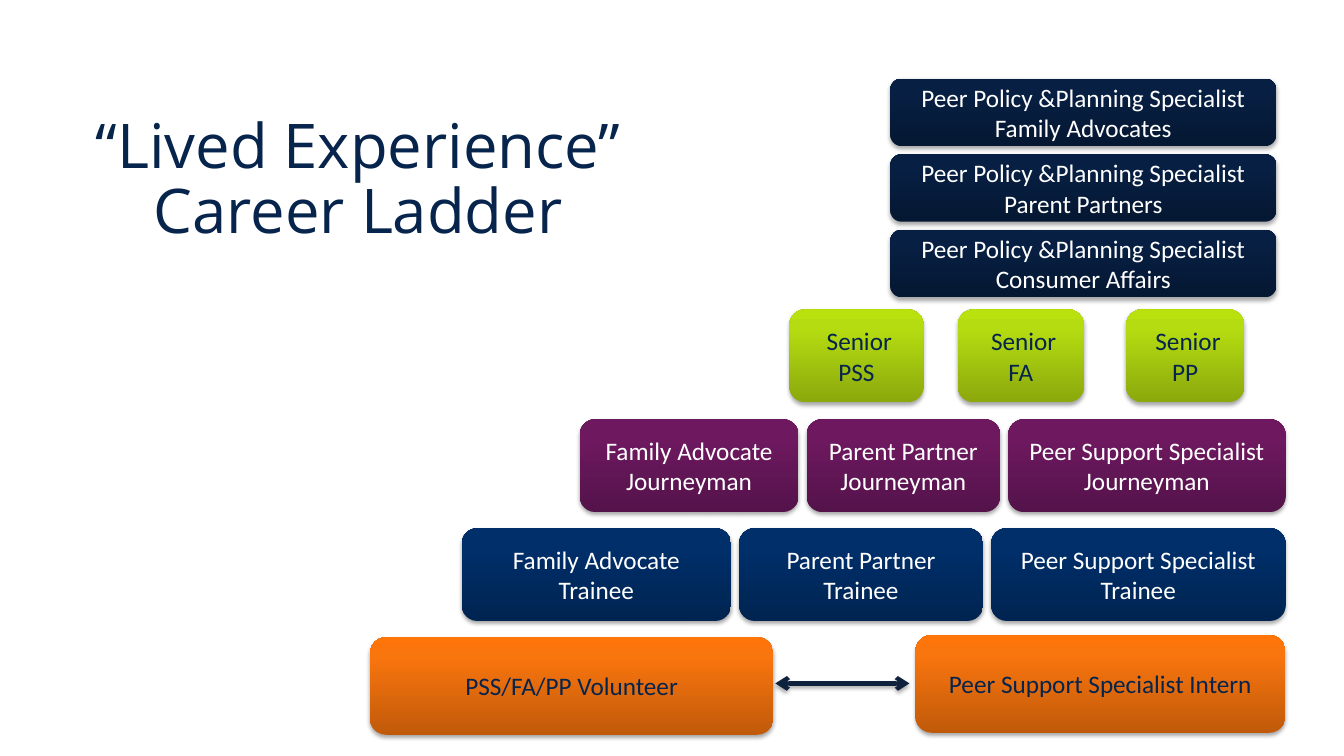
"""Builds the "Lived Experience" career ladder slide."""
from copy import deepcopy
from lxml.etree import SubElement
from pptx import Presentation
from pptx.dml.color import RGBColor
from pptx.enum.shapes import MSO_CONNECTOR, MSO_SHAPE
from pptx.enum.text import MSO_ANCHOR, PP_ALIGN
from pptx.oxml.ns import qn
from pptx.util import Inches, Pt

COLORS = {
    "ink": "06244C", "white": "FFFFFF", "arrow": "0E213D", "shadow": "000000",
    "orange": ("C05A0A", "F9750E", "FF7509"),
    "blue": ("002451", "002F6A", "002F6A"),
    "purple": ("54134A", "6E1860", "701661"),
    "green": ("8BA90D", "B5DC11", "B8E10D"),
    "navy": ("051833", "071F42", "061F43"),
}
POLICY = "Peer Policy &Planning Specialist\n"
ROWS = [
    ("navy", "white", 0.78, 0.67, [(8.83, 3.83, POLICY + "Family Advocates")]),
    ("navy", "white", 1.53, 0.67, [(8.83, 3.83, POLICY + "Parent Partners")]),
    ("navy", "white", 2.28, 0.67, [(8.83, 3.83, POLICY + "Consumer Affairs")]),
    ("green", "ink", 3.07, 0.92, [(7.83, 1.33, " Senior PSS"),
                                  (9.5, 1.25, " Senior FA"),
                                  (11.17, 1.17, " Senior PP")]),
    ("purple", "white", 4.16, 0.92, [(5.75, 2.17, "Family Advocate Journeyman"),
                                     (8, 1.92, "Parent Partner Journeyman"),
                                     (10, 2.75, "Peer Support Specialist Journeyman")]),
    ("blue", "white", 5.24, 0.92, [(4.58, 2.67, "Family Advocate Trainee"),
                                   (7.33, 2.42, "Parent Partner Trainee"),
                                   (9.83, 2.92, "Peer Support Specialist Trainee")]),
    ("orange", "ink", 6.32, 0.97, [(3.67, 4, "PSS/FA/PP Volunteer")]),
    ("orange", "ink", 6.3, 0.97, [(9.08, 3.67, "Peer Support Specialist Intern")]),
]


def add_shadow(effects):
    shadow = SubElement(effects, qn("a:outerShdw"), blurRad=str(Pt(3.1)),
                        dist=str(Pt(1.8)), dir="5400000", rotWithShape="0")
    color = SubElement(shadow, qn("a:srgbClr"), val=COLORS["shadow"])
    SubElement(color, qn("a:alpha"), val="35000")


def style_text(tf, size, font, color):
    tf.word_wrap = True
    tf.vertical_anchor = MSO_ANCHOR.MIDDLE
    for p in tf.paragraphs:
        p.alignment = PP_ALIGN.CENTER
        for r in p.runs:
            r.font.size = Pt(size)
            r.font.name = font
            r.font.color.rgb = RGBColor.from_string(COLORS[color])


prs = Presentation()
prs.slide_width, prs.slide_height = Inches(13.33), Inches(7.5)
slide = prs.slides.add_slide(prs.slide_layouts[6])

title = slide.shapes.add_textbox(Inches(0.67), Inches(0.87), Inches(5.77), Inches(1.85))
tf = title.text_frame
tf.margin_left = tf.margin_right = tf.margin_top = tf.margin_bottom = Inches(0)
tf.text = "“Lived Experience”\vCareer Ladder"
tf.paragraphs[0].line_spacing = Pt(46)
style_text(tf, 44, "Open Sans", "ink")

for fill, ink, top, height, boxes in ROWS:
    for left, width, text in boxes:
        s = slide.shapes.add_shape(MSO_SHAPE.ROUNDED_RECTANGLE, Inches(left),
                                   Inches(top), Inches(width), Inches(height))
        s.line.fill.background()
        s.fill.gradient()
        s.fill.gradient_angle = 90
        stops = s._element.spPr.find(".//" + qn("a:gsLst"))
        stops.append(deepcopy(stops[-1]))
        for stop, position, color in zip(s.fill.gradient_stops, (0, 0.8, 1), COLORS[fill]):
            stop.position = position
            stop.color.rgb = RGBColor.from_string(color)
        s.shadow.inherit = False
        add_shadow(s._element.spPr.find(qn("a:effectLst")))
        s.text_frame.text = text
        style_text(s.text_frame, 18, "Calibri", ink)

arrow = slide.shapes.add_connector(MSO_CONNECTOR.STRAIGHT, Inches(7.69), Inches(6.78),
                                   Inches(9.02), Inches(6.78))
arrow.line.width = Pt(3)
arrow.line.color.rgb = RGBColor.from_string(COLORS["arrow"])
for end in ("a:headEnd", "a:tailEnd"):
    SubElement(arrow.line._get_or_add_ln(), qn(end), type="arrow")
add_shadow(SubElement(arrow._element.spPr, qn("a:effectLst")))

prs.save("out.pptx")
